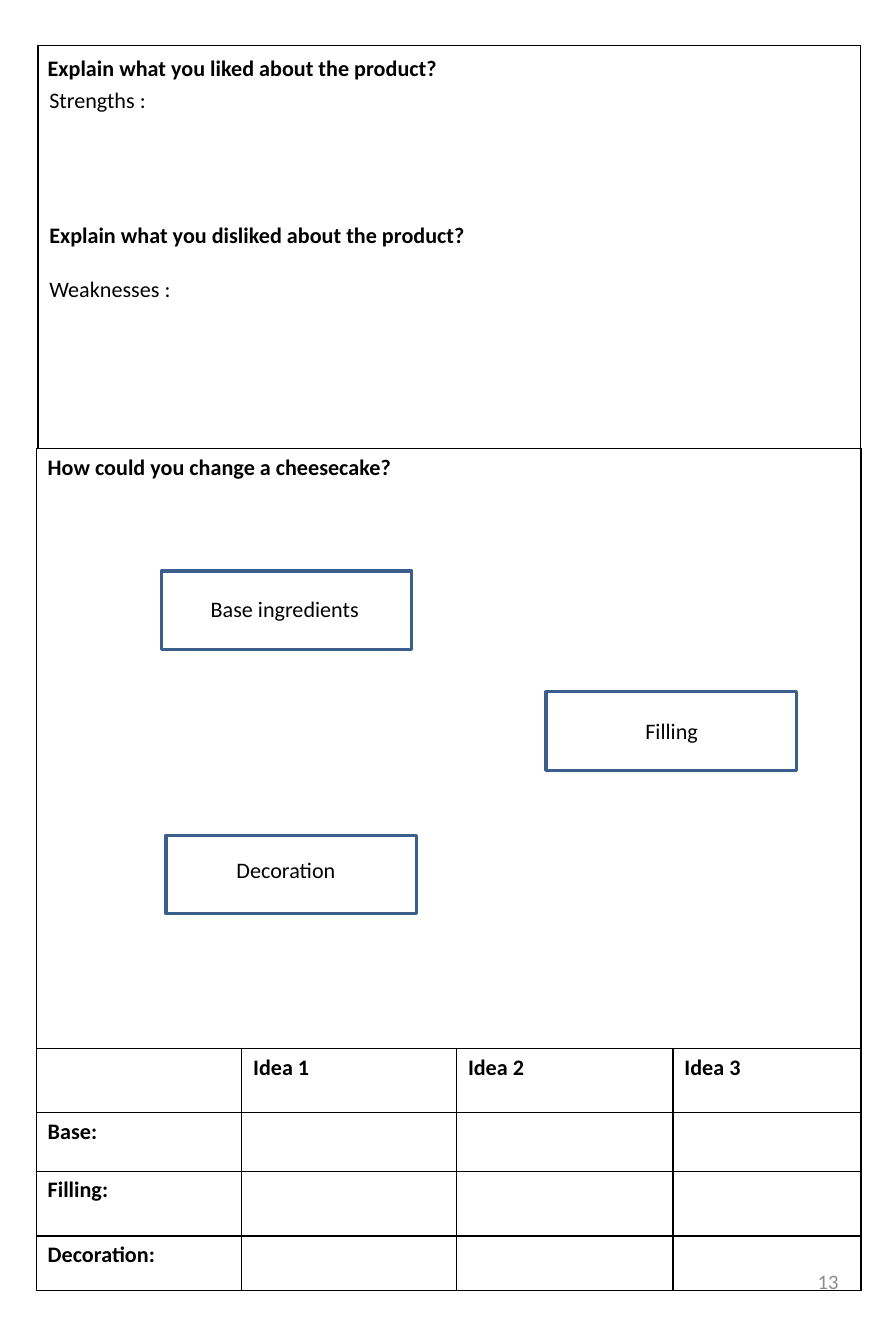
import pptx
import pptx.dml.color
import pptx.enum.shapes
import pptx.enum.text
import pptx.oxml.ns
import pptx.util
from lxml import etree

Pt = pptx.util.Pt
ALIGN = pptx.enum.text.PP_ALIGN
ANCHOR = pptx.enum.text.MSO_ANCHOR
BLACK = pptx.dml.color.RGBColor(0x00, 0x00, 0x00)
GREY = pptx.dml.color.RGBColor(0x8C, 0x8C, 0x8C)
BLUE = pptx.dml.color.RGBColor(0x3A, 0x5F, 0x8C)

TITLE = "Explain what you liked about the product?"
REVIEW = [
    ("Strengths :", False, 0),
    ("Explain what you disliked about the product?", True, 68),
    ("Weaknesses :", False, 17),
]
QUESTION = "How could you change a cheesecake?"
IDEAS = [
    ["", "Idea 1", "Idea 2", "Idea 3"],
    ["Base:", "", "", ""],
    ["Filling:", "", "", ""],
    ["Decoration:", "", "", ""],
]
IDEA_COLS = [130, 136, 137, 119]
IDEA_ROWS = [380, 40.5, 37, 41, 34.5]
BOX_SIZE = (158.4, 49.7)
BOXES = [
    ("Base ingredients", (102.2, 361.4), (102.2, 373, 156.2)),
    ("Filling", (345.6, 437.8), (368.6, 450.7, 113)),
    ("Decoration", (105.1, 528.5), (110.1, 538.6, 141.8)),
]
PAGE_NUMBER = "13"


def format_text(p, bold=False, color=BLACK, size=14):
    for r in p.runs:
        r.font.name = "Calibri"
        r.font.size = Pt(size)
        r.font.bold = bold
        r.font.color.rgb = color


def add_label(s, text, left, top, width, height, align, color=BLACK, size=14):
    tf = s.shapes.add_textbox(Pt(left), Pt(top), Pt(width), Pt(height)).text_frame
    tf.word_wrap = True
    p = tf.paragraphs[0]
    p.text = text
    p.alignment = align
    format_text(p, color=color, size=size)
    return tf


def style_cell(cell):
    tcPr = cell._tc.get_or_add_tcPr()
    for side in ("a:lnL", "a:lnR", "a:lnT", "a:lnB"):
        ln = etree.SubElement(tcPr, pptx.oxml.ns.qn(side), w=str(Pt(1)))
        fill = etree.SubElement(ln, pptx.oxml.ns.qn("a:solidFill"))
        etree.SubElement(fill, pptx.oxml.ns.qn("a:srgbClr"), val=str(BLACK))
    cell.fill.background()


def add_grid(s, left, top, cols, rows):
    table = s.shapes.add_table(
        len(rows), len(cols), Pt(left), Pt(top), Pt(sum(cols)), Pt(sum(rows))
    ).table
    table.first_row = False
    table.horz_banding = False
    for col, width in zip(table.columns, cols):
        col.width = Pt(width)
    for row, height in zip(table.rows, rows):
        row.height = Pt(height)
    for cell in table.iter_cells():
        style_cell(cell)
    return table


def main():
    prs = pptx.Presentation()
    prs.slide_width, prs.slide_height = Pt(567), Pt(850.5)
    s = prs.slides.add_slide(prs.slide_layouts[5])

    title = s.shapes.title
    title.left, title.top, title.width, title.height = Pt(23), Pt(31), Pt(499), Pt(24.5)
    tf = title.text_frame
    tf.text = TITLE
    tf.vertical_anchor = ANCHOR.TOP
    tf.paragraphs[0].alignment = ALIGN.LEFT
    format_text(tf.paragraphs[0], bold=True)

    review = add_grid(s, 24, 28.8, [520.6], [254.9]).cell(0, 0)
    review.margin_top = Pt(26.8)
    tf = review.text_frame
    for i, (text, bold, gap) in enumerate(REVIEW):
        p = tf.add_paragraph() if i else tf.paragraphs[0]
        p.text = text
        p.space_before = Pt(gap)
        format_text(p, bold)

    ideas = add_grid(s, 23, 283.7, IDEA_COLS, IDEA_ROWS)
    ideas.cell(0, 0).merge(ideas.cell(0, len(IDEA_COLS) - 1))
    for i, row in enumerate([[QUESTION]] + IDEAS):
        for j, text in enumerate(row):
            if text:
                p = ideas.cell(i, j).text_frame.paragraphs[0]
                p.text = text
                format_text(p, bold=True)

    for text, (left, top), (text_left, text_top, text_width) in BOXES:
        sp = s.shapes.add_shape(
            pptx.enum.shapes.MSO_SHAPE.RECTANGLE,
            Pt(left), Pt(top), Pt(BOX_SIZE[0]), Pt(BOX_SIZE[1]),
        )
        sp.shadow.inherit = False
        sp.fill.background()
        sp.line.color.rgb = BLUE
        sp.line.width = Pt(2)
        add_label(s, text, text_left, text_top, text_width, 24.5, ALIGN.CENTER)

    tf = add_label(s, PAGE_NUMBER, 406, 788.4, 132.5, 45.4, ALIGN.RIGHT, GREY, 13)
    tf.vertical_anchor = ANCHOR.MIDDLE
    tf.margin_left = tf.margin_right = Pt(7.9)

    prs.save("out.pptx")


if __name__ == "__main__":
    main()
